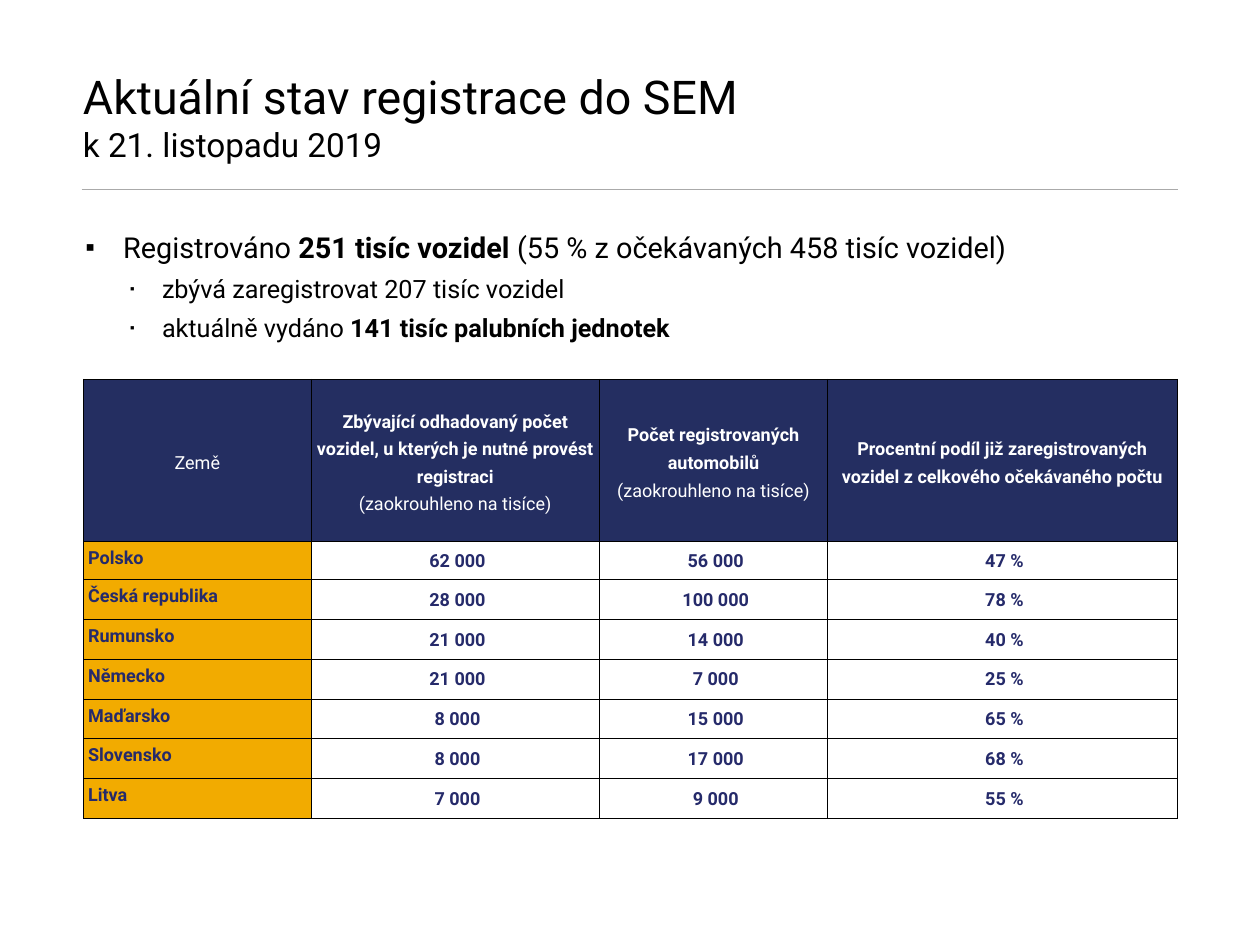
from lxml import etree
from pptx import Presentation
from pptx import util as u
from pptx.dml.color import RGBColor
from pptx.enum import shapes, text
from pptx.oxml import ns


class Theme:
    face = "Roboto"
    black = RGBColor.from_string("000000")
    white = RGBColor.from_string("FFFFFF")
    gray = RGBColor.from_string("AAAAAA")
    navy = RGBColor.from_string("242E61")
    ink = RGBColor.from_string("252A6A")
    gold = RGBColor.from_string("F2AB00")
    title, date, lead, point, cell = 51.7, 37, 32, 28, 20


def add(node, tag, **attrs):
    return etree.SubElement(node, ns.qn(tag), attrs)


def style(run, size, color, bold=False):
    run.font.name = Theme.face
    run.font.size = u.Pt(size)
    run.font.color.rgb = color
    run.font.bold = bold


deck = Presentation()
deck.slide_width, deck.slide_height = u.Pt(1399.68), u.Pt(1049.76)
slide = deck.slides.add_slide(deck.slide_layouts[1])
title, body = slide.placeholders

rule = slide.shapes.add_connector(
    shapes.MSO_CONNECTOR.STRAIGHT, u.Pt(90.7), u.Pt(211), u.Pt(1309), u.Pt(211))
rule.line.color.rgb = Theme.gray
rule.line.width = u.Pt(1)
add(rule._element.spPr, "a:effectLst")

boxes = [
    (title, (87.8, 36.7, 1218.2, 149.8), text.MSO_ANCHOR.BOTTOM),
    (body, (90.7, 250.6, 1247.8, 692.6), text.MSO_ANCHOR.TOP),
]
for box, place, anchor in boxes:
    box.left, box.top, box.width, box.height = map(u.Pt, place)
    frame = box.text_frame
    frame.word_wrap = True
    frame.auto_size = text.MSO_AUTO_SIZE.NONE
    frame.vertical_anchor = anchor
    frame.margin_left = frame.margin_right = u.Pt(4.3)
    frame.margin_top = frame.margin_bottom = u.Pt(4.3)

title.text_frame.text = "Aktuální stav registrace do SEM\vk 21. listopadu 2019"
head = title.text_frame.paragraphs[0]
head.alignment = text.PP_ALIGN.LEFT
for run, size in zip(head.runs, (Theme.title, Theme.date)):
    style(run, size, Theme.black)

points = [
    (0, ["Registrováno ", "251 tisíc vozidel ", "(55 % z očekávaných 458 tisíc vozidel)"]),
    (1, ["zbývá zaregistrovat 207 tisíc vozidel"]),
    (1, ["aktuálně vydáno ", "141 tisíc palubních jednotek"]),
]
levels = [(41.76, -41.76, 80, Theme.lead), (84.96, -35.28, 45, Theme.point)]
for i, (level, parts) in enumerate(points):
    para = body.text_frame.add_paragraph() if i else body.text_frame.paragraphs[0]
    para.level = level
    para.space_before = u.Pt(10 if i else 0)
    left, hang, scale, size = levels[level]
    props = para._p.get_or_add_pPr()
    props.set("marL", str(u.Pt(left)))
    props.set("indent", str(u.Pt(hang)))
    add(props, "a:buSzPct", val=str(scale * 1000))
    add(props, "a:buFont", typeface=Theme.face)
    add(props, "a:buChar", char="▪")
    for j, part in enumerate(parts):
        run = para.add_run()
        run.text = part
        style(run, size, Theme.black, j == 1)

note = "(zaokrouhleno na tisíce)"
heads = [
    "Země",
    "Zbývající odhadovaný počet vozidel, u kterých je nutné provést registraci\n" + note,
    "Počet registrovaných automobilů\n" + note,
    "Procentní podíl již zaregistrovaných vozidel z očekávaného počtu".replace(
        "z oček", "z celkového oček"),
]
data = [
    ("Polsko", "62 000", "56 000", "47 %"),
    ("Česká republika", "28 000", "100 000", "78 %"),
    ("Rumunsko", "21 000", "14 000", "40 %"),
    ("Německo", "21 000", "7 000", "25 %"),
    ("Maďarsko", "8 000", "15 000", "65 %"),
    ("Slovensko", "8 000", "17 000", "68 %"),
    ("Litva", "7 000", "9 000", "55 %"),
]
rows = [heads, *data]
widths = [252.7, 320.4, 253.4, 388.1]
heights = [180, 42.5] + [44.25] * 6
table = slide.shapes.add_table(
    len(rows), len(widths), u.Pt(92.9), u.Pt(421.2),
    u.Pt(sum(widths)), u.Pt(sum(heights))).table
table.first_row = table.horz_banding = False
for col, width in zip(table.columns, widths):
    col.width = u.Pt(width)
for row, height in zip(table.rows, heights):
    row.height = u.Pt(height)

for r, row in enumerate(rows):
    for c, words in enumerate(row):
        cell = table.cell(r, c)
        top, land = r == 0, c == 0
        cell.text_frame.text = words if top or land else " " + words
        side = u.Pt(5 if top or land else 0)
        cell.margin_left = cell.margin_right = side
        cell.margin_top = cell.margin_bottom = 0
        cell.vertical_anchor = (
            text.MSO_ANCHOR.TOP if land and not top else text.MSO_ANCHOR.MIDDLE)
        for para in cell.text_frame.paragraphs:
            para.alignment = (
                text.PP_ALIGN.LEFT if land and not top else text.PP_ALIGN.CENTER)
            para.line_spacing = 1.3 if top or land else 1.07
            bold = para.text not in (heads[0], note)
            for run in para.runs:
                style(run, Theme.cell, Theme.white if top else Theme.ink, bold)
        props = cell._tc.get_or_add_tcPr()
        for edge in ("a:lnL", "a:lnR", "a:lnT", "a:lnB"):
            line = add(props, edge, w=str(u.Pt(1)))
            add(add(line, "a:solidFill"), "a:srgbClr", val=str(Theme.black))
        if top or land:
            cell.fill.solid()
            cell.fill.fore_color.rgb = Theme.navy if top else Theme.gold
        else:
            cell.fill.background()

deck.save("out.pptx")
